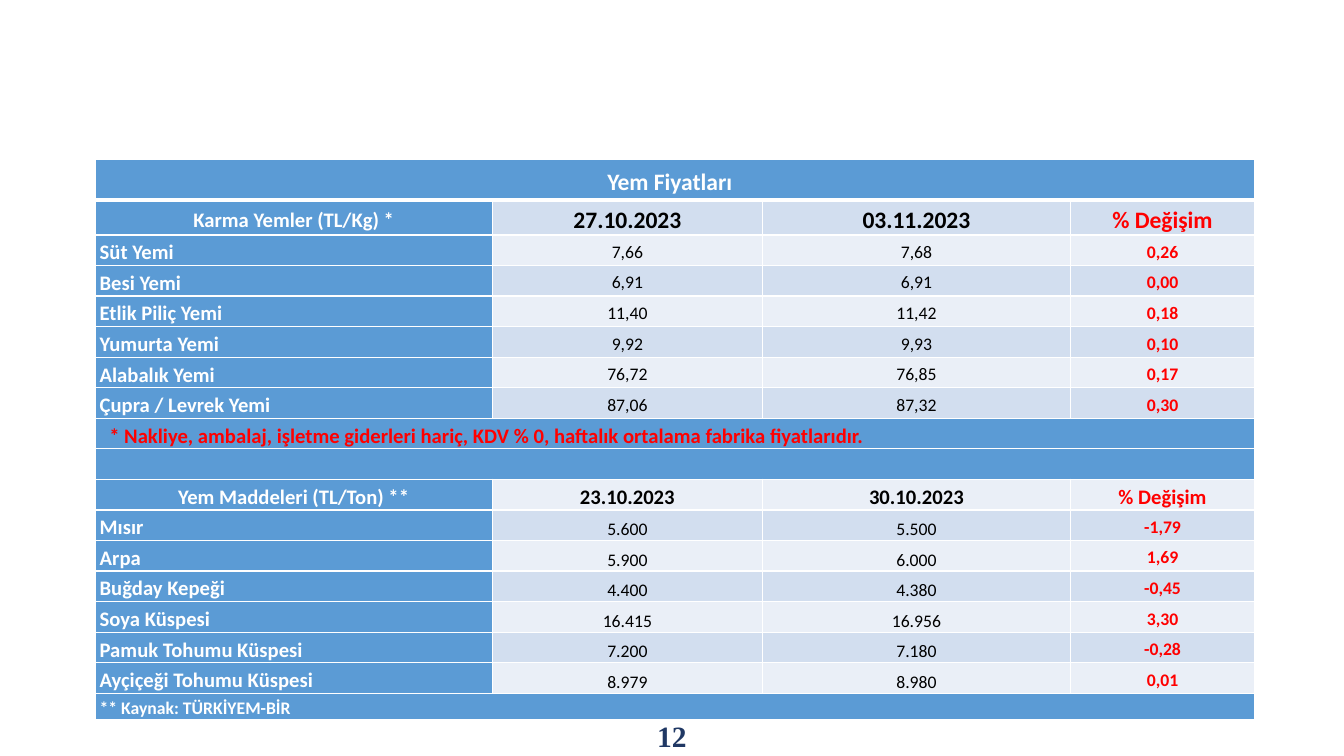
from lxml import etree
from pptx import Presentation
from pptx import util as u
from pptx.dml.color import RGBColor
from pptx.enum import text
from pptx.oxml.ns import qn

WIDTH, HEIGHT = 12.67, 7.13
WHITE, BLACK, RED, NAVY = "FFFFFF", "000000", "FF0000", "203864"
BLUE, BAND_DARK, BAND_LIGHT = "5B9BD5", "D2DEEF", "EAEFF7"
CENTER, LEFT = text.PP_ALIGN.CENTER, text.PP_ALIGN.LEFT
MIDDLE, BOTTOM = text.MSO_ANCHOR.MIDDLE, text.MSO_ANCHOR.BOTTOM

# Table content: a one-item row spans all columns
TITLE = ("Yem Fiyatları",)
FEED_HEADER = ("Karma Yemler (TL/Kg) *", "27.10.2023", "03.11.2023", "% Değişim")
FEEDS = [
    ("Süt Yemi", "7,66", "7,68", "0,26"),
    ("Besi Yemi", "6,91", "6,91", "0,00"),
    ("Etlik Piliç Yemi", "11,40", "11,42", "0,18"),
    ("Yumurta Yemi", "9,92", "9,93", "0,10"),
    ("Alabalık Yemi", "76,72", "76,85", "0,17"),
    ("Çupra / Levrek Yemi", "87,06", "87,32", "0,30"),
]
NOTE = ("* Nakliye, ambalaj, işletme giderleri hariç, KDV % 0, "
        "haftalık ortalama fabrika fiyatlarıdır.",)
MATERIAL_HEADER = ("Yem Maddeleri (TL/Ton) **", "23.10.2023", "30.10.2023", "% Değişim")
MATERIALS = [
    ("Mısır", "5.600", "5.500", "-1,79"),
    ("Arpa", "5.900", "6.000", "1,69"),
    ("Buğday Kepeği", "4.400", "4.380", "-0,45"),
    ("Soya Küspesi", "16.415", "16.956", "3,30"),
    ("Pamuk Tohumu Küspesi", "7.200", "7.180", "-0,28"),
    ("Ayçiçeği Tohumu Küspesi", "8.979", "8.980", "0,01"),
]
SOURCE = ("** Kaynak: TÜRKİYEM-BİR",)


def color(value):
    return RGBColor.from_string(value)


def assign(target, values):
    for name, value in values.items():
        setattr(target, name, value)


class PriceSlide:
    font = "Calibri"

    def __init__(self, presentation):
        self.presentation = presentation
        self.slide = presentation.slides.add_slide(presentation.slide_layouts[6])

    def place(self, left, top, width, height):
        """Turn shares of the slide's size into lengths."""
        across, down = self.presentation.slide_width, self.presentation.slide_height
        return (int(left * across), int(top * down), int(width * across), int(height * down))

    def fill_paragraph(self, paragraph, words, size, hue, bold=True, align=CENTER, font=None):
        paragraph.alignment = align
        if not words:
            etree.SubElement(paragraph._p, qn("a:endParaRPr"), sz=str(size * 100))
            return
        run = paragraph.add_run()
        run.text = words
        assign(run.font, {"size": u.Pt(size), "bold": bold, "name": font or self.font})
        run.font.color.rgb = color(hue)

    def label(self, box, words, **style):
        shape = self.slide.shapes.add_textbox(*self.place(*box))
        assign(shape.text_frame, {"word_wrap": True, "vertical_anchor": MIDDLE})
        self.fill_paragraph(shape.text_frame.paragraphs[0], words, **style)

    def borders(self, cell, top=1, bottom=1):
        properties = cell._tc.get_or_add_tcPr()
        for side, points in (("L", 1), ("R", 1), ("T", top), ("B", bottom)):
            line = etree.SubElement(properties, qn("a:ln" + side), w=str(u.Pt(points)))
            fill = etree.SubElement(line, qn("a:solidFill"))
            etree.SubElement(fill, qn("a:srgbClr"), val=WHITE)

    def cell(self, cell, words, fill, anchor=MIDDLE, indent=0, outdent=0, edges=None, **style):
        self.borders(cell, **(edges or {}))
        cell.fill.solid()
        cell.fill.fore_color.rgb = color(fill)
        assign(cell, {"margin_left": u.Inches(0.04 + indent),
                      "margin_right": u.Inches(0.04 + outdent),
                      "margin_top": 0, "margin_bottom": 0, "vertical_anchor": anchor})
        paragraph = cell.text_frame.paragraphs[0]
        paragraph.line_spacing = 1.2
        self.fill_paragraph(paragraph, words, **style)

    def table(self, box, column_weights, rows):
        """Each row is (weight, words, list of cell styles)."""
        left, top, width, height = self.place(*box)
        frame = self.slide.shapes.add_table(
            len(rows), len(column_weights), left, top, width, height)
        table = frame.table
        assign(table, {"first_row": False, "horz_banding": False})
        for column, weight in zip(table.columns, column_weights):
            column.width = int(width * weight / sum(column_weights))
        total = sum(weight for weight, _, _ in rows)
        for index, (weight, words, styles) in enumerate(rows):
            table.rows[index].height = int(height * weight / total)
            band = BAND_DARK if index % 2 else BAND_LIGHT
            edges = {"top": 3 if index == 1 else 1, "bottom": 1 if index else 3}
            if len(words) == 1:
                table.cell(index, 0).merge(table.cell(index, len(column_weights) - 1))
            for number, (word, style) in enumerate(zip(words, styles)):
                self.cell(table.cell(index, number), word,
                          fill=band if number else BLUE, edges=edges, **style)


def header_styles(size):
    return [{"size": 14, "hue": WHITE}, *[{"size": size, "hue": BLACK}] * 2,
            {"size": size, "hue": RED}]


def price_styles(anchor):
    price = {"size": 12, "hue": BLACK, "bold": False, "anchor": anchor}
    return [{"size": 14, "hue": WHITE, "align": LEFT}, price, price,
            {"size": 12, "hue": RED}]


def main():
    presentation = Presentation()
    presentation.slide_width = u.Inches(WIDTH)
    presentation.slide_height = u.Inches(HEIGHT)
    page = PriceSlide(presentation)

    # Feed price table, row heights relative to a normal row
    rows = [
        (1.35, TITLE, [{"size": 16, "hue": WHITE, "outdent": 0.1}]),
        (1, FEED_HEADER, header_styles(16)),
        *[(1, feed, price_styles(MIDDLE)) for feed in FEEDS],
        (1, NOTE, [{"size": 14, "hue": RED, "align": LEFT, "indent": 0.09}]),
        (1, ("",), [{"size": 14, "hue": WHITE}]),
        (1, MATERIAL_HEADER, header_styles(14)),
        *[(1, material, price_styles(BOTTOM)) for material in MATERIALS],
        (0.86, SOURCE, [{"size": 12, "hue": WHITE, "align": LEFT}]),
    ]
    page.table((0.9 / WIDTH, 1.5 / HEIGHT, 10.93 / WIDTH, 5.25 / HEIGHT),
               (3.74, 2.55, 2.9, 1.74), rows)

    # Page number
    page.label((4.91 / WIDTH, 6.75 / HEIGHT, 2.85 / WIDTH, 0.38 / HEIGHT), "12",
               size=20, hue=NAVY, font="Times New Roman")

    presentation.save("out.pptx")


if __name__ == "__main__":
    main()
